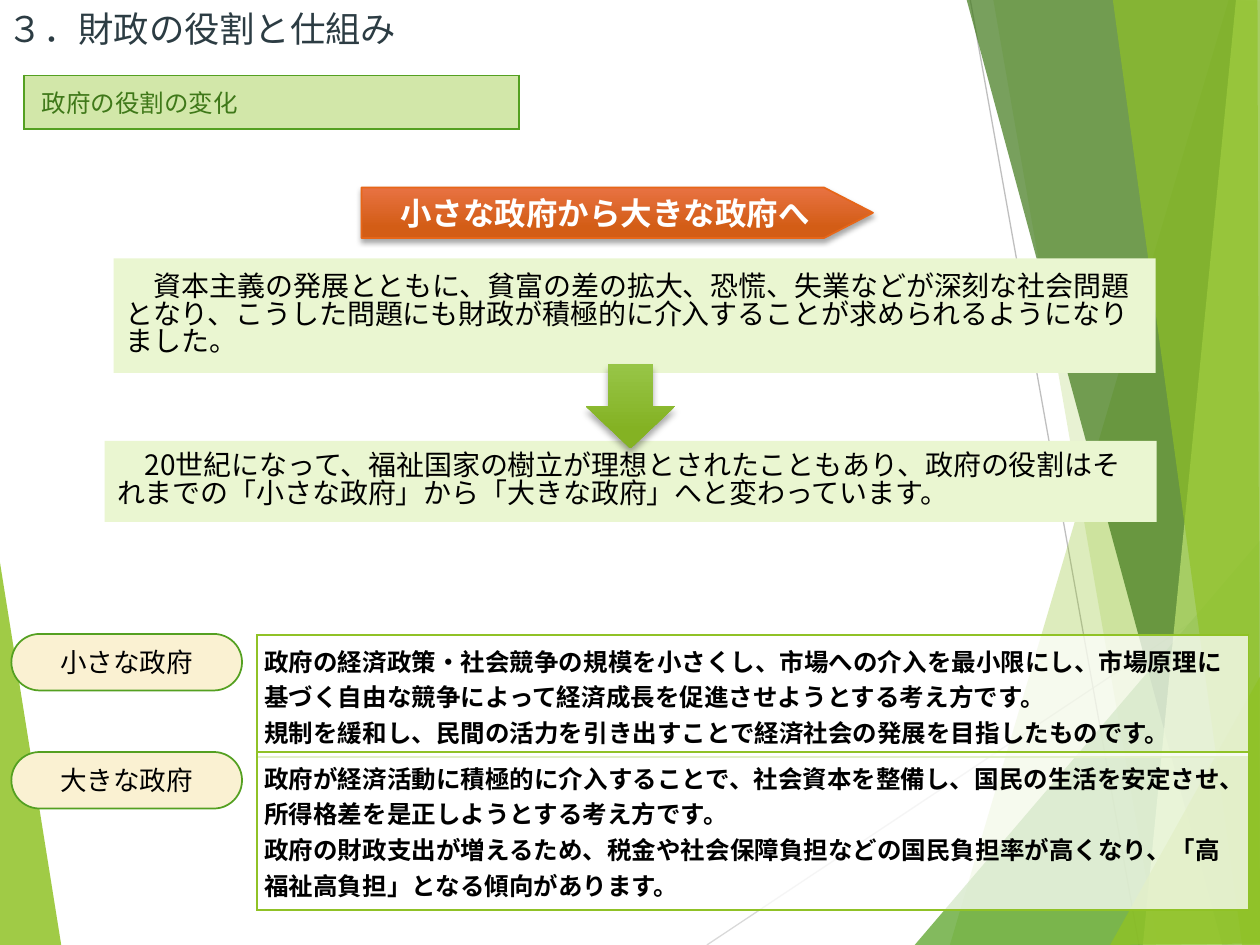
import pptx
import pptx.chart.data
import pptx.dml.color
import pptx.enum.shapes
import pptx.enum.text
import pptx.oxml
import pptx.oxml.ns
import pptx.util
from dataclasses import dataclass
from typing import Any, Optional

Cm = pptx.util.Cm
Pt = pptx.util.Pt
Kind = pptx.enum.shapes.MSO_SHAPE
Align = pptx.enum.text.PP_ALIGN
Anchor = pptx.enum.text.MSO_ANCHOR

FONT = "Noto Sans CJK JP"
HUE = {
    "lime": "90C226", "green": "54A021", "dark": "3F7819", "light": "C0E474",
    "pale": "EAF6D1", "head": "D2E7A9", "cream": "FAF1D2", "slate": "2C3C43",
    "black": "000000", "white": "FFFFFF", "rust": "E76618",
    "rust top": "E87242", "rust end": "D35D16",
    "leaf top": "97C547", "leaf end": "84B223",
    "gray": "BFBFBF", "mist": "D9D9D9",
}


@dataclass
class Facet:
    hue: str
    alpha: int
    points: list[tuple[float, float]]


@dataclass
class Box:
    left: float
    top: float
    width: float
    height: float

    def place(self) -> list[int]:
        return [Cm(v) for v in (self.left, self.top, self.width, self.height)]


@dataclass
class Panel:
    box: Box
    lines: list[str]
    fill: str = "white"
    alpha: Optional[int] = 75
    edge: str = "lime"
    ink: str = "black"
    bold: bool = True
    pad: tuple[float, float] = (0.15, 0.15)
    anchor: Any = Anchor.MIDDLE


def rgb(hue: str) -> Any:
    return pptx.dml.color.RGBColor.from_string(HUE[hue])


def node(tag: str, **attrs: Any) -> Any:
    item = pptx.oxml.parse_xml(f"<{tag} {pptx.oxml.ns.nsdecls('a')}/>")
    for key, value in attrs.items():
        item.set(key, str(value))
    return item


def tint(fill: Any, root: Any, hue: str, alpha: Optional[int] = None) -> None:
    fill.solid()
    fill.fore_color.rgb = rgb(hue)
    if alpha:
        color = root.find(pptx.oxml.ns.qn("a:solidFill"))[0]
        color.append(node("a:alpha", val=alpha * 1000))


def write(frame: Any, lines: list[str], size: float = 14, ink: str = "black", bold: bool = False,
          align: Any = Align.LEFT, space: Optional[float] = None) -> None:
    frame.word_wrap = True
    for i, line in enumerate(lines):
        para = frame.add_paragraph() if i else frame.paragraphs[0]
        para.alignment = align
        if space:
            para.line_spacing = space
        run = para.add_run()
        run.text = line
        font = run.font
        font.name, font.size, font.bold = FONT, Pt(size), bold
        font.color.rgb = rgb(ink)
        font._element.find(pptx.oxml.ns.qn("a:latin")).addnext(node("a:ea", typeface=FONT))


def facet(shapes: Any, item: Facet) -> None:
    first, *rest = [(Cm(x), Cm(y)) for x, y in item.points]
    build = shapes.build_freeform(*first)
    build.add_line_segments(rest, close=True)
    shape = build.convert_to_shape()
    shape.shadow.inherit = False
    shape.line.fill.background()
    tint(shape.fill, shape._element.spPr, item.hue, item.alpha)


def rule(shapes: Any, ends: tuple[float, ...], hue: str) -> None:
    line = shapes.add_connector(pptx.enum.shapes.MSO_CONNECTOR.STRAIGHT, *[Cm(v) for v in ends])
    line.line.color.rgb = rgb(hue)
    line.line.width = Pt(0.75)
    line._element.spPr.append(node("a:effectLst"))


def panel(shapes: Any, item: Panel) -> None:
    frame = shapes.add_table(1, 1, *item.box.place())
    table = frame.table
    table.first_row = table.horz_banding = False
    cell = table.cell(0, 0)
    cell.margin_left = cell.margin_right = Cm(item.pad[0])
    cell.margin_top = cell.margin_bottom = Cm(item.pad[1])
    cell.vertical_anchor = item.anchor
    write(cell.text_frame, item.lines, ink=item.ink, bold=item.bold)
    root = cell._tc.get_or_add_tcPr()
    tint(cell.fill, root, item.fill, item.alpha)
    for i, side in enumerate("LRTB"):
        edge = node(f"a:ln{side}", w=Pt(1))
        solid = node("a:solidFill")
        solid.append(node("a:srgbClr", val=HUE[item.edge]))
        edge.append(solid)
        root.insert(i, edge)


def block(shapes: Any, kind: Any, box: Box, fill: str, edge: Optional[str] = None,
          bend: Optional[float] = None) -> Any:
    shape = shapes.add_shape(kind, *box.place())
    shape.shadow.inherit = False
    tint(shape.fill, shape._element.spPr, fill)
    if edge:
        shape.line.color.rgb = rgb(edge)
        shape.line.width = Pt(1)
    else:
        shape.line.fill.background()
    if bend is not None:
        shape.adjustments[0] = bend
    shape.text_frame.vertical_anchor = Anchor.MIDDLE
    return shape


def gloss(shape: Any, hue: str, blur: float, drop: float) -> None:
    shape.fill.gradient()
    shape.fill.gradient_angle = 270
    for stop, part, pos in zip(shape.fill.gradient_stops, ("top", "end"), (0, 0.78)):
        stop.color.rgb = rgb(f"{hue} {part}")
        stop.position = pos
    shade = node("a:outerShdw", blurRad=Pt(blur), dist=Pt(drop), dir=5400000, rotWithShape=0)
    color = node("a:srgbClr", val=HUE["black"])
    color.append(node("a:alpha", val=35000))
    shade.append(color)
    shape._element.spPr.find(pptx.oxml.ns.qn("a:effectLst")).append(shade)


FACETS = [
    Facet("lime", 30, [(24.77, 0), (19.15, 19.05), (25.45, 19.08), (25.43, 0.03)]),
    Facet("lime", 20, [(20.02, -0.03), (23.34, 19.05), (25.43, 19.05), (25.43, -0.03)]),
    Facet("green", 72, [(18.44, 19.05), (25.4, 10.9), (25.43, 19.05)]),
    Facet("dark", 70, [(19.48, -0.03), (24.64, 19.05), (25.43, 19.02), (25.43, -0.03)]),
    Facet("light", 70, [(24.92, -0.03), (23.04, 19.05), (25.43, 19.05), (25.4, -0.03)]),
    Facet("lime", 65, [(22.43, -0.03), (25.04, 19.05), (25.4, 19.05), (25.35, -0.03)]),
    Facet("lime", 80, [(22.38, 19.05), (25.43, 13.59), (25.43, 19.02)]),
]
PANELS = [
    Panel(Box(0.48, 1.52, 9.98, 1.02), ["政府の役割の変化"], "head", None, "green", "dark",
          False, (0.36, 0.18), Anchor.TOP),
    Panel(Box(5.18, 12.8, 19.99, 2.21), [
        "政府の経済政策・社会競争の規模を小さくし、市場への介入を最小限にし、市場原理に基づく自由な競争によって経済成長を促進させようとする考え方です。",
        "規制を緩和し、民間の活力を引き出すことで経済社会の発展を目指したものです。"]),
    Panel(Box(5.18, 15.16, 19.99, 2.84), [
        "政府が経済活動に積極的に介入することで、社会資本を整備し、国民の生活を安定させ、所得格差を是正しようとする考え方です。",
        "政府の財政支出が増えるため、税金や社会保障負担などの国民負担率が高くなり、「高福祉高負担」となる傾向があります。"]),
]
PILLS = [(12.78, "小さな政府"), (15.16, "大きな政府")]
LATER = "　20世紀になって、福祉国家の樹立が理想とされたこともあり、政府の役割はそれまでの「小さな政府」から「大きな政府」へと変わっています。"
EARLY = "　資本主義の発展とともに、貧富の差の拡大、恐慌、失業などが深刻な社会問題となり、こうした問題にも財政が積極的に介入することが求められるようになりました。"


def main() -> None:
    """Build the slide on the changing role of government."""
    deck = pptx.Presentation()
    deck.slide_width, deck.slide_height = Cm(25.4), Cm(19.05)
    shapes = deck.slides.add_slide(deck.slide_layouts[6]).shapes

    facet(shapes, Facet("lime", 85, [(-0.03, 11.15), (1.24, 19.08), (-0.03, 19.05)]))
    rule(shapes, (14.25, 19.05, 25.43, 11.61), "mist")
    rule(shapes, (19.56, 0, 22.96, 19.05), "gray")
    for item in FACETS:
        facet(shapes, item)
    for item in PANELS:
        panel(shapes, item)
    for top, name in PILLS:
        pill = block(shapes, Kind.ROUNDED_RECTANGLE, Box(0.23, top, 4.65, 1.14), "cream", "green", 0.5)
        write(pill.text_frame, [name], size=15.2, align=Align.CENTER)

    title = shapes.add_textbox(*Box(0, 0, 10.16, 1.14).place()).text_frame
    title.margin_left = title.margin_right = title.margin_top = title.margin_bottom = 0
    title.vertical_anchor = Anchor.MIDDLE
    write(title, [" ３．財政の役割と仕組み"], size=20.2, ink="slate")

    later = block(shapes, Kind.RECTANGLE, Box(2.11, 8.89, 21.21, 1.63), "pale")
    write(later.text_frame, [LATER], size=16, space=0.83)
    sign = block(shapes, Kind.PENTAGON, Box(7.29, 3.78, 10.31, 1.02), "rust", "rust", 0.97)
    gloss(sign, "rust", 3, 2)
    write(sign.text_frame, ["小さな政府から大きな政府へ"], size=18, ink="white", bold=True, align=Align.CENTER)
    early = block(shapes, Kind.RECTANGLE, Box(2.29, 5.21, 21.01, 2.31), "pale")
    write(early.text_frame, [EARLY], size=16, space=0.83)
    arrow = block(shapes, Kind.DOWN_ARROW, Box(11.81, 7.34, 1.8, 1.7), "lime")
    gloss(arrow, "leaf", 4, 3)

    deck.save("out.pptx")


if __name__ == "__main__":
    main()
